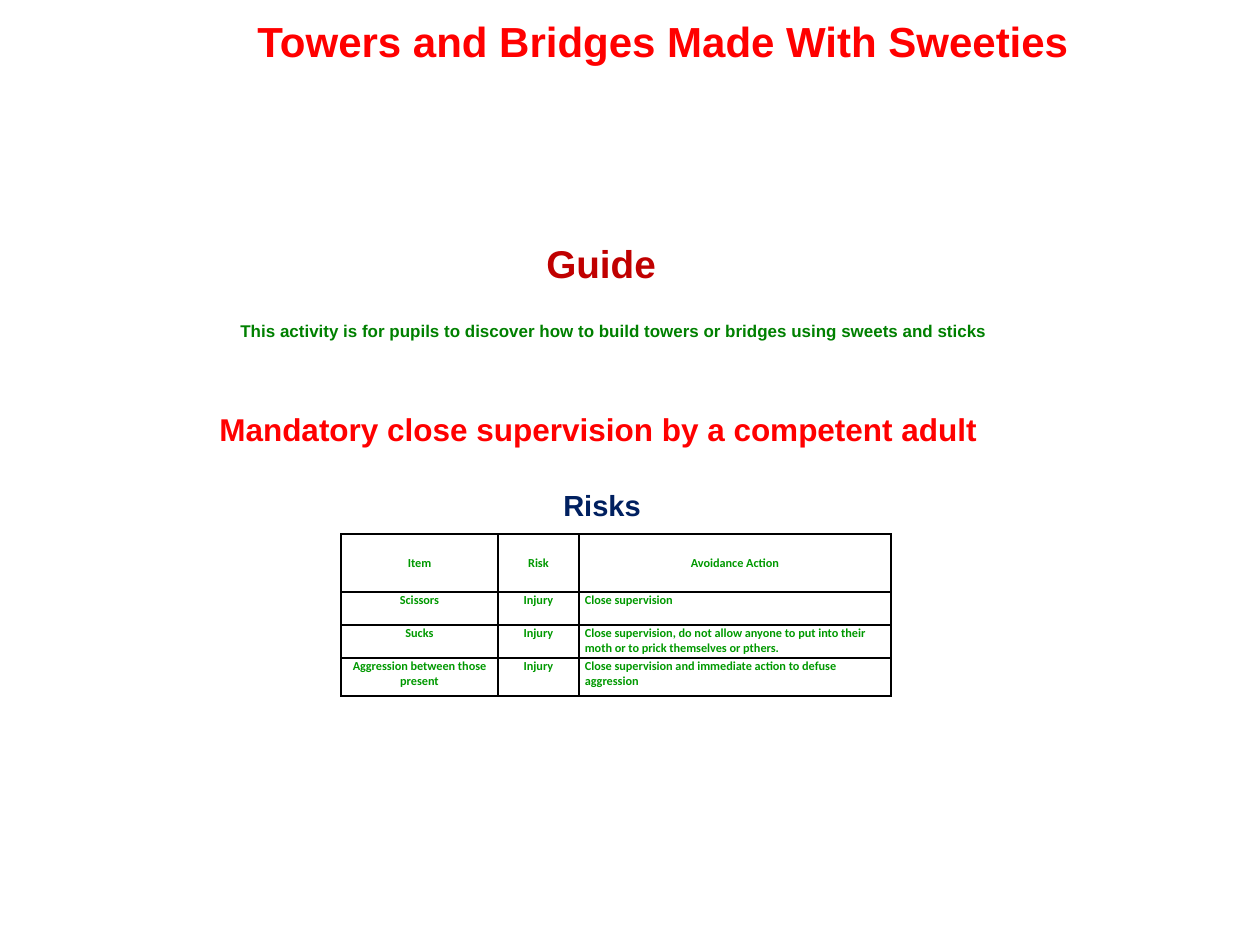
from lxml.etree import SubElement as Sub
from pptx import Presentation
from pptx.dml.color import RGBColor as RGB
from pptx.enum.text import MSO_ANCHOR as Anchor, MSO_AUTO_SIZE as Auto, PP_ALIGN as Align
from pptx.oxml.ns import qn
from pptx.util import Emu, Pt

SCALE = 914400 / 126
INK = {
    "red": "FF0000", "wine": "C00000", "green": "008000",
    "navy": "002060", "leaf": "009900", "rule": "000000",
}
TITLE = ("Towers and Bridges Made With Sweeties", (241, 9, 844, 63), 24, "red")
NOTES = [
    ("Guide", (534, 234, 136, 59), 22.1, "wine", False),
    ("This activity is for pupils to discover how to build towers or bridges"
     " using sweets and sticks", (228, 314, 777, 74), 9.7, "green", True),
    ("Risks", (551, 481, 103, 48), 16.6, "navy", False),
    ("Mandatory close supervision by a competent adult",
     (207, 404, 790, 50), 18, "red", False),
]
RISKS = [
    ("Item", "Risk", "Avoidance Action"),
    ("Scissors", "Injury", "Close supervision"),
    ("Sucks", "Injury", "Close supervision, do not allow anyone to put into "
     "their moth or to prick themselves or pthers."),
    ("Aggression between those present", "Injury",
     "Close supervision and immediate action to defuse aggression"),
]
SPOT = (341, 534)
COLS = (157, 81, 312)
ROWS = (58, 33, 33, 38)


def px(n):
    """Turn pixels into EMU."""
    return Emu(round(n * SCALE))


def apply(item, form):
    """Set each attribute in a dict of format values."""
    for key, val in form.items():
        setattr(item, key, val)


def write(frame, text, size, ink, face="Arial", align=Align.LEFT):
    """Write one bold paragraph into a text frame."""
    para = frame.paragraphs[0]
    para.alignment = align
    run = para.add_run()
    run.text = text
    apply(run.font, {"name": face, "size": Pt(size), "bold": True})
    run.font.color.rgb = RGB.from_string(INK[ink])


def fit(frame, wrap):
    """Set wrapping, anchor and growth of a text frame."""
    apply(frame, {"word_wrap": wrap, "vertical_anchor": Anchor.TOP,
                  "auto_size": Auto.SHAPE_TO_FIT_TEXT})


def add_title(slide, text, box, size, ink):
    """Place and format the title placeholder."""
    title = slide.shapes.title
    apply(title, dict(zip(("left", "top", "width", "height"), map(px, box))))
    fit(title.text_frame, False)
    write(title.text_frame, text, size, ink, align=Align.CENTER)


def add_note(slide, text, box, size, ink, wrap):
    """Add a line of text in its own box."""
    frame = slide.shapes.add_textbox(*map(px, box)).text_frame
    fit(frame, wrap)
    write(frame, text, size, ink)


def rule(cell):
    """Draw thin rules on all four sides of a cell."""
    props = cell._tc.get_or_add_tcPr()
    for side in ("lnL", "lnR", "lnT", "lnB"):
        line = Sub(props, qn(f"a:{side}"), w=str(Pt(1)))
        Sub(Sub(line, qn("a:solidFill")), qn("a:srgbClr"), val=INK["rule"])


def add_risks(slide):
    """Add the table of risks."""
    size = (len(ROWS), len(COLS))
    area = map(px, (*SPOT, sum(COLS), sum(ROWS)))
    table = slide.shapes.add_table(*size, *area).table
    apply(table, {"first_row": False, "horz_banding": False})
    for col, wide in zip(table.columns, COLS):
        col.width = px(wide)
    for r, (row, high) in enumerate(zip(table.rows, ROWS)):
        row.height = px(high)
        for c, (cell, text) in enumerate(zip(row.cells, RISKS[r])):
            rule(cell)
            cell.fill.background()
            apply(cell, {
                "margin_left": px(6), "margin_right": px(6),
                "margin_top": px(1), "margin_bottom": 0,
                "vertical_anchor": Anchor.TOP if r else Anchor.MIDDLE,
            })
            align = Align.LEFT if r and c == 2 else Align.CENTER
            write(cell.text_frame, text, 7, "leaf", "Calibri", align)


def main():
    """Build the slide and save it."""
    deck = Presentation()
    apply(deck, {"slide_width": px(1260), "slide_height": px(945)})
    slide = deck.slides.add_slide(deck.slide_layouts[5])
    add_title(slide, *TITLE)
    for note in NOTES:
        add_note(slide, *note)
    add_risks(slide)
    deck.save("out.pptx")


if __name__ == "__main__":
    main()
